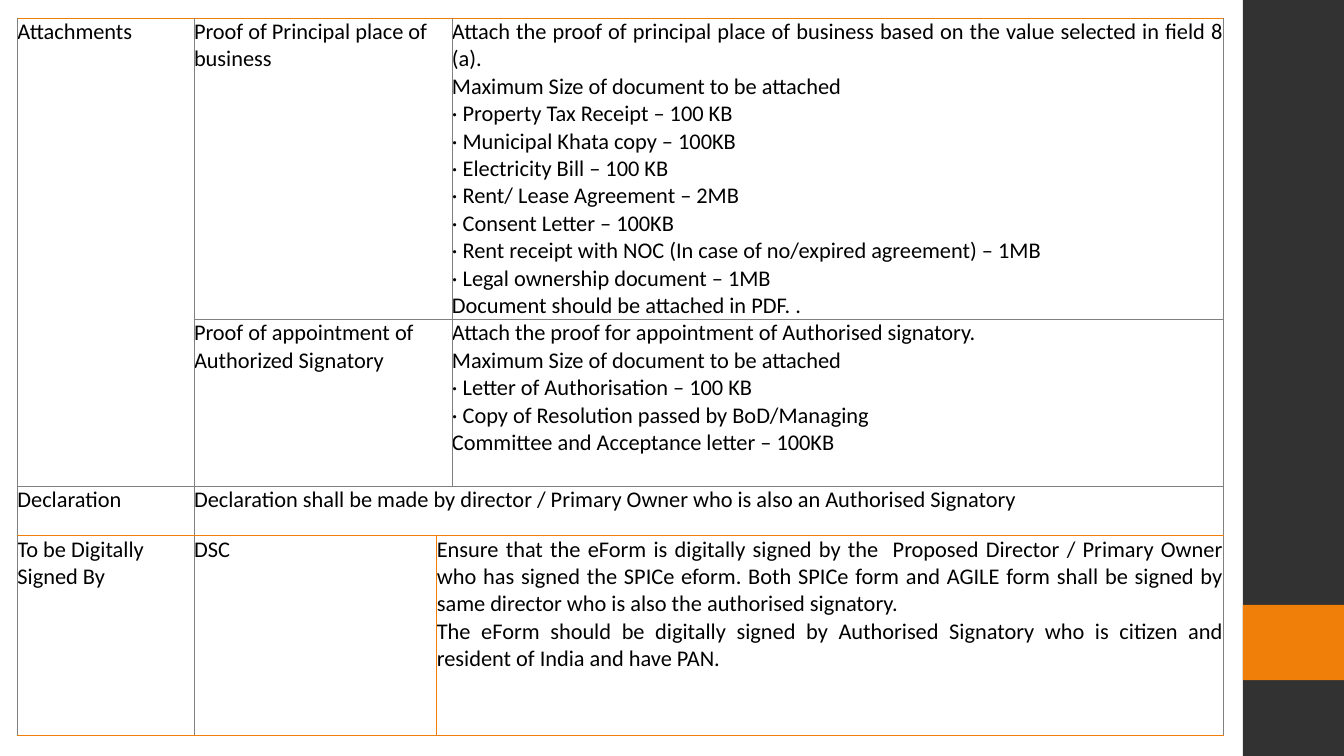
import pptx
import pptx.util
import pptx.dml.color
import pptx.enum.shapes
import pptx.enum.text
import pptx.oxml
import pptx.oxml.ns

Cm, Pt = pptx.util.Cm, pptx.util.Pt
LEFT = pptx.enum.text.PP_ALIGN.LEFT
JUST = pptx.enum.text.PP_ALIGN.JUSTIFY

# Content: (row, column, rows spanned, columns spanned, alignment, lines)
CELLS = [
    (0, 0, 2, 1, LEFT, ["Attachments"]),
    (0, 1, 1, 2, LEFT, ["Proof of Principal place of business"]),
    (0, 3, 1, 1, JUST, [
        "Attach the proof of principal place of business based on the value selected in field 8 (a).",
        "Maximum Size of document to be attached",
        "· Property Tax Receipt – 100 KB",
        "· Municipal Khata copy – 100KB",
        "· Electricity Bill – 100 KB",
        "· Rent/ Lease Agreement – 2MB",
        "· Consent Letter – 100KB",
        "· Rent receipt with NOC (In case of no/expired agreement) – 1MB",
        "· Legal ownership document – 1MB",
        "Document should be attached in PDF. .",
    ]),
    (1, 1, 1, 2, LEFT, ["Proof of appointment of Authorized Signatory"]),
    (1, 3, 1, 1, JUST, [
        "Attach the proof for appointment of Authorised signatory.",
        "Maximum Size of document to be attached",
        "· Letter of Authorisation – 100 KB",
        "· Copy of Resolution passed by BoD/Managing",
        "Committee and Acceptance letter – 100KB",
    ]),
    (2, 0, 1, 1, LEFT, ["Declaration"]),
    (2, 1, 1, 3, LEFT, [
        "Declaration shall be made by director / Primary Owner who is also an Authorised Signatory",
    ]),
    (3, 0, 1, 1, JUST, ["To be Digitally", "Signed By"]),
    (3, 1, 1, 1, LEFT, ["DSC"]),
    (3, 2, 1, 2, JUST, [
        "Ensure that the eForm is digitally signed by the  Proposed Director / Primary Owner who has "
        "signed the SPICe eform. Both SPICe form and AGILE form shall be signed by same director who "
        "is also the authorised signatory.",
        "The eForm should be digitally signed by Authorised Signatory who is citizen and resident of "
        "India and have PAN.",
    ]),
]
COLS = [4.45, 6.12, 0.38, 19.44]
ROWS = [7.59, 4.2, 1.25, 5.03]
COLORS = {"dark": "323232", "orange": "F07F09", "text": "000000", "grid": "808080"}
BARS = [("dark", 0, 19.05), ("orange", 15.24, 1.9)]

# Cell edges drawn in orange: (row, column, side)
ACCENT = {(0, c, "T") for c in range(4)}
ACCENT |= {(2, c, "B") for c in range(4)} | {(3, c, "T") for c in range(4)}
ACCENT |= {(3, c, "B") for c in range(4)} | {(3, 1, "R"), (3, 2, "L")}


def rgb(name):
    return pptx.dml.color.RGBColor.from_string(COLORS[name])


def edge(cell, side, name, width):
    cell._tc.get_or_add_tcPr().append(pptx.oxml.parse_xml(
        f'<a:ln{side} {pptx.oxml.ns.nsdecls("a")} w="{Pt(width)}"><a:solidFill>'
        f'<a:srgbClr val="{COLORS[name]}"/></a:solidFill></a:ln{side}>'))


deck = pptx.Presentation()
deck.slide_width, deck.slide_height = Cm(33.87), Cm(19.05)
slide = deck.slides.add_slide(deck.slide_layouts[6])

# Side bars
for name, top, high in BARS:
    bar = slide.shapes.add_shape(pptx.enum.shapes.MSO_SHAPE.RECTANGLE,
                                 Cm(31.32), Cm(top), Cm(2.55), Cm(high))
    bar.shadow.inherit = False
    bar.fill.solid()
    bar.fill.fore_color.rgb = rgb(name)
    bar.line.fill.background()

# Table grid
table = slide.shapes.add_table(len(ROWS), len(COLS), Cm(0.44), Cm(0.46),
                               Cm(sum(COLS)), Cm(sum(ROWS))).table
table.first_row = table.horz_banding = False
for col, wide in zip(table.columns, COLS):
    col.width = Cm(wide)
for row, high in zip(table.rows, ROWS):
    row.height = Cm(high)
for r in range(len(ROWS)):
    for c in range(len(COLS)):
        cell = table.cell(r, c)
        cell.margin_left = cell.margin_right = cell.margin_top = cell.margin_bottom = 0
        for side in "LRTB":
            if (r, c, side) in ACCENT:
                edge(cell, side, "orange", 1)
            else:
                edge(cell, side, "grid", 0.5)
        cell.fill.background()

# Cell text
for r, c, down, across, align, lines in CELLS:
    cell = table.cell(r, c)
    if down * across > 1:
        cell.merge(table.cell(r + down - 1, c + across - 1))
    cell.text = "\n".join(lines)
    for para in cell.text_frame.paragraphs:
        para.alignment = align
        para.font.name, para.font.size = "Calibri", Pt(16)
        para.font.color.rgb = rgb("text")

deck.save("out.pptx")
